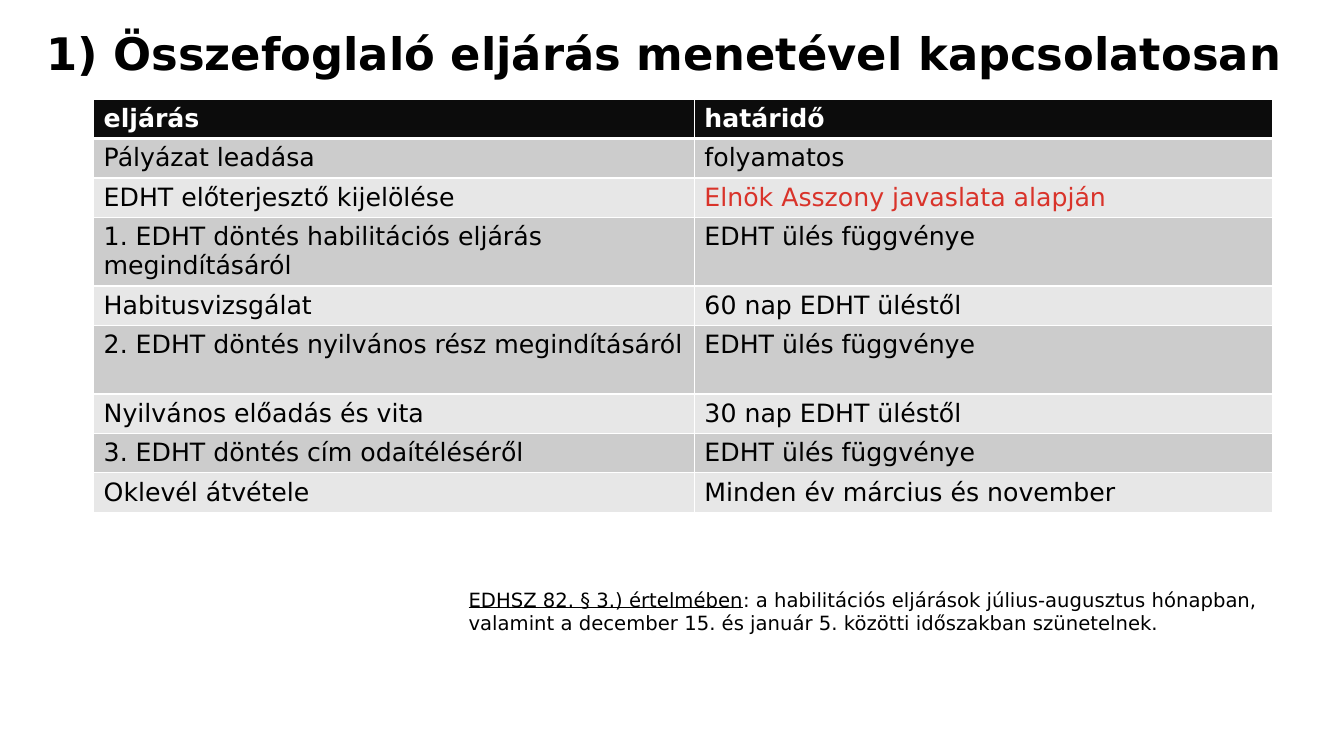
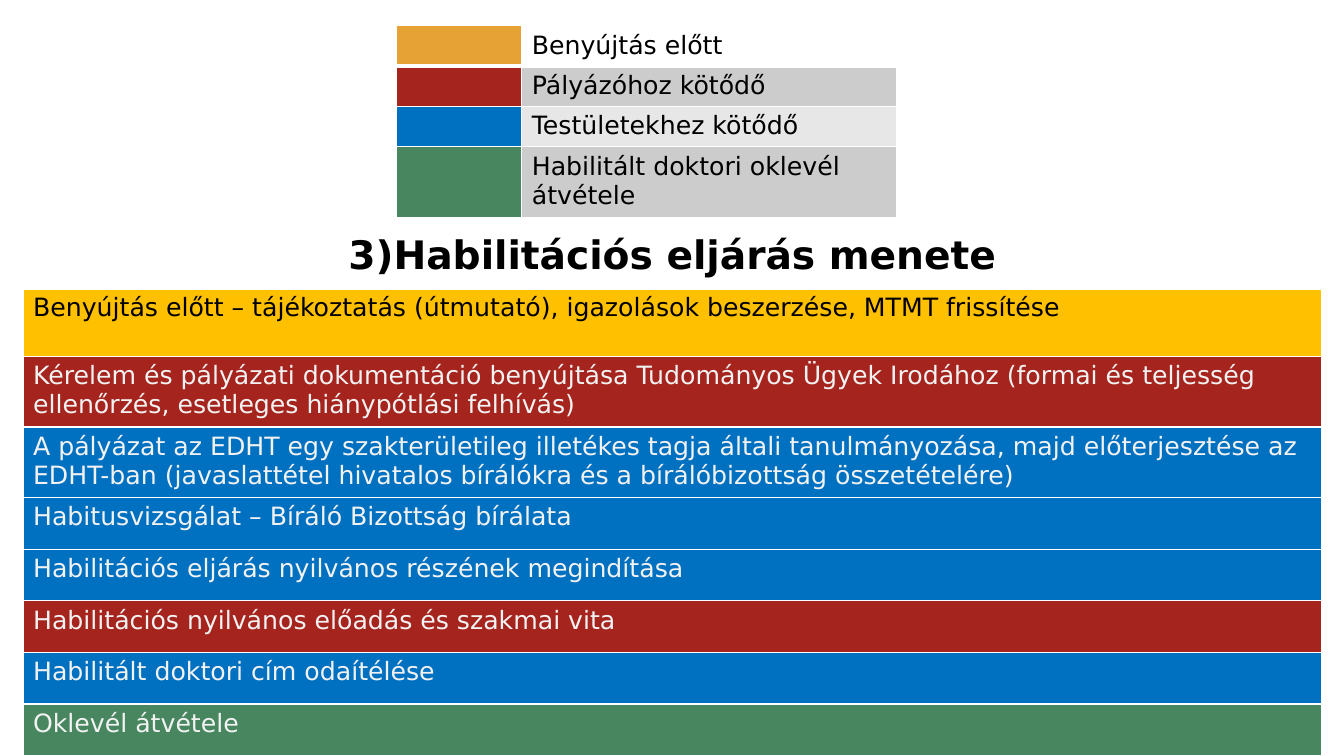
import pptx
import pptx.dml.color
import pptx.enum.text
import pptx.oxml.ns
import pptx.util
from lxml import etree
from pptx.util import Cm

# Shared look
FONT = "DejaVu Sans"
BLACK, WHITE, PALE = "000000", "FFFFFF", "F2F2F2"
HEADER = "0C0C0C"
BANDS = ("CCCCCC", "E7E7E7")
ALERT = "D9332A"
YELLOW, AMBER = "FFC000", "E7A236"
APPLICANT, BOARD, DIPLOMA = "A5241D", "0070C0", "47865F"
ONE_LINE, TWO_LINES, STEP_LINE = 0.99, 1.73, 1.3  # row heights in cm
LEFT = pptx.enum.text.PP_ALIGN.LEFT
CENTER = pptx.enum.text.PP_ALIGN.CENTER

DEADLINES = [
    ("Pályázat leadása", "folyamatos", ONE_LINE),
    ("EDHT előterjesztő kijelölése", "Elnök Asszony javaslata alapján", ONE_LINE),
    ("1. EDHT döntés habilitációs eljárás megindításáról", "EDHT ülés függvénye", TWO_LINES),
    ("Habitusvizsgálat", "60 nap EDHT üléstől", ONE_LINE),
    ("2. EDHT döntés nyilvános rész megindításáról", "EDHT ülés függvénye", TWO_LINES),
    ("Nyilvános előadás és vita", "30 nap EDHT üléstől", ONE_LINE),
    ("3. EDHT döntés cím odaítéléséről", "EDHT ülés függvénye", ONE_LINE),
    ("Oklevél átvétele", "Minden év március és november", ONE_LINE),
]

STEPS = [
    ("Benyújtás előtt – tájékoztatás (útmutató), igazolások beszerzése, MTMT frissítése",
     YELLOW, TWO_LINES),
    ("Kérelem és pályázati dokumentáció benyújtása Tudományos Ügyek Irodához "
     "(formai és teljesség ellenőrzés, esetleges hiánypótlási felhívás)",
     APPLICANT, TWO_LINES),
    ("A pályázat az EDHT egy szakterületileg illetékes tagja általi tanulmányozása, "
     "majd előterjesztése az EDHT-ban (javaslattétel hivatalos bírálókra és a "
     "bírálóbizottság összetételére)", BOARD, TWO_LINES),
    ("Habitusvizsgálat – Bíráló Bizottság bírálata", BOARD, STEP_LINE),
    ("Habilitációs eljárás nyilvános részének megindítása", BOARD, STEP_LINE),
    ("Habilitációs nyilvános előadás és szakmai vita", APPLICANT, STEP_LINE),
    ("Habilitált doktori cím odaítélése", BOARD, STEP_LINE),
    ("Oklevél átvétele", DIPLOMA, STEP_LINE),
]

LEGEND = [
    ("Benyújtás előtt", AMBER, None, ONE_LINE),
    ("Pályázóhoz kötődő", APPLICANT, BANDS[0], ONE_LINE),
    ("Testületekhez kötődő", BOARD, BANDS[1], ONE_LINE),
    ("Habilitált doktori oklevél átvétele", DIPLOMA, BANDS[0], TWO_LINES),
]


def rgb(color):
    return pptx.dml.color.RGBColor.from_string(color)


def write(paragraph, text, size=18, color=BLACK, bold=False, underline=False, align=LEFT):
    """Add one formatted run to a paragraph."""
    paragraph.alignment = align
    run = paragraph.add_run()
    run.text = text
    run.font.name = FONT
    run.font.size = pptx.util.Pt(size)
    run.font.bold = bold
    run.font.underline = underline
    run.font.color.rgb = rgb(color)


def border(cell, **widths):
    """Draw white cell borders; widths in points by side (L, R, T, B)."""
    properties = cell._tc.get_or_add_tcPr()
    for side in "LRTB":
        line = etree.SubElement(properties, pptx.oxml.ns.qn(f"a:ln{side}"),
                                w=str(pptx.util.Pt(widths.get(side, 1))))
        fill = etree.SubElement(line, pptx.oxml.ns.qn("a:solidFill"))
        etree.SubElement(fill, pptx.oxml.ns.qn("a:srgbClr"), val=WHITE)


def add_grid(slide, left, top, widths, heights, rows):
    """Build a table from rows of (text, fill, text format) cells."""
    frame = slide.shapes.add_table(len(rows), len(widths), Cm(left), Cm(top),
                                   Cm(sum(widths)), Cm(sum(heights)))
    table = frame.table
    table.first_row = table.horz_banding = False
    for column, width in zip(table.columns, widths):
        column.width = Cm(width)
    for r, (height, row) in enumerate(zip(heights, rows)):
        table.rows[r].height = Cm(height)
        for c, (text, fill, style) in enumerate(row):
            cell = table.cell(r, c)
            # A thick rule separates the first row from the rest
            border(cell, T=3 if r == 1 else 1, B=3 if r == 0 else 1)
            if fill:
                cell.fill.solid()
                cell.fill.fore_color.rgb = rgb(fill)
            else:
                cell.fill.background()
            if text:
                write(cell.text_frame.paragraphs[0], text, **style)


def add_title(slide, text):
    title = slide.shapes.title
    title.left, title.top, title.width, title.height = Cm(0.91), Cm(0.05), Cm(32), Cm(2.74)
    frame = title.text_frame
    frame.auto_size = pptx.enum.text.MSO_AUTO_SIZE.NONE
    frame.vertical_anchor = pptx.enum.text.MSO_ANCHOR.MIDDLE
    frame.paragraphs[0].line_spacing = 0.9
    write(frame.paragraphs[0], text, size=32, bold=True)


def add_note(slide, lead, rest):
    note = slide.shapes.add_textbox(Cm(11.56), Cm(14.68), Cm(22.3), Cm(2.24)).text_frame
    note.word_wrap = True
    write(note.paragraphs[0], lead, size=14, underline=True)
    write(note.paragraphs[0], rest, size=14)


def deadlines_slide(deck):
    slide = deck.slides.add_slide(deck.slide_layouts[5])
    add_title(slide, "1) Összefoglaló eljárás menetével kapcsolatosan")
    heading = {"color": WHITE, "bold": True}
    rows = [[("eljárás", HEADER, heading), ("határidő", HEADER, heading)]]
    for i, (step, deadline, _) in enumerate(DEADLINES):
        band = BANDS[i % 2]
        color = ALERT if deadline.startswith("Elnök") else BLACK
        rows.append([(step, band, {}), (deadline, band, {"color": color})])
    heights = [ONE_LINE] + [height for *_, height in DEADLINES]
    add_grid(slide, 2.36, 2.5, [15.14, 14.58], heights, rows)
    add_note(slide, "EDHSZ 82. § 3.) értelmében",
             ": a habilitációs eljárások július-augusztus hónapban, valamint a "
             "december 15. és január 5. közötti időszakban szünetelnek.")


def procedure_slide(deck):
    slide = deck.slides.add_slide(deck.slide_layouts[6])
    # Steps under their heading row
    rows = [[("3)Habilitációs eljárás menete", None,
              {"size": 28, "bold": True, "align": CENTER})]]
    for step, fill, _ in STEPS:
        rows.append([(step, fill, {"color": BLACK if fill == YELLOW else PALE})])
    heights = [1.5] + [height for *_, height in STEPS]
    add_grid(slide, 0.58, 5.75, [32.72], heights, rows)
    # Colour legend
    legend = [[("", swatch, {}), (label, band, {})] for label, swatch, band, _ in LEGEND]
    add_grid(slide, 10, 0.65, [3.15, 9.45], [height for *_, height in LEGEND], legend)


def main():
    deck = pptx.Presentation()
    deck.slide_width, deck.slide_height = Cm(33.87), Cm(19.05)
    deadlines_slide(deck)
    procedure_slide(deck)
    deck.save("out.pptx")


if __name__ == "__main__":
    main()
